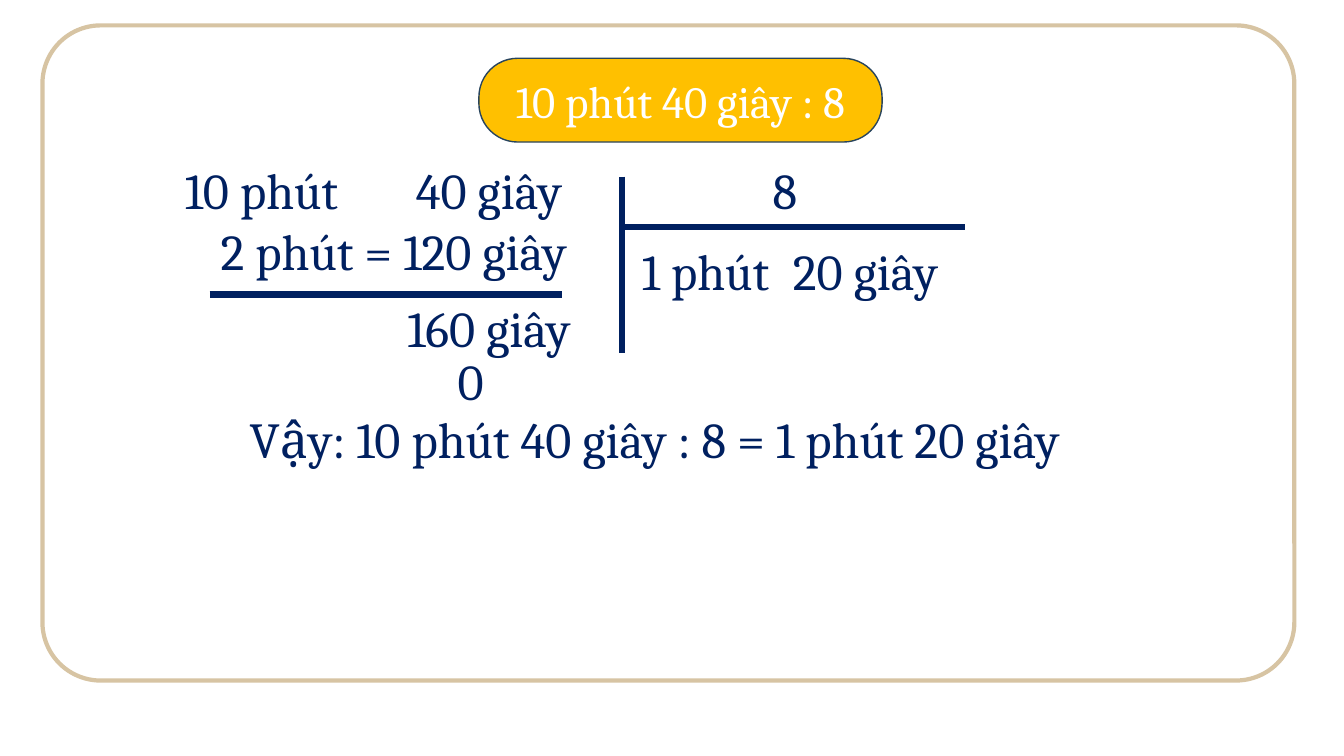
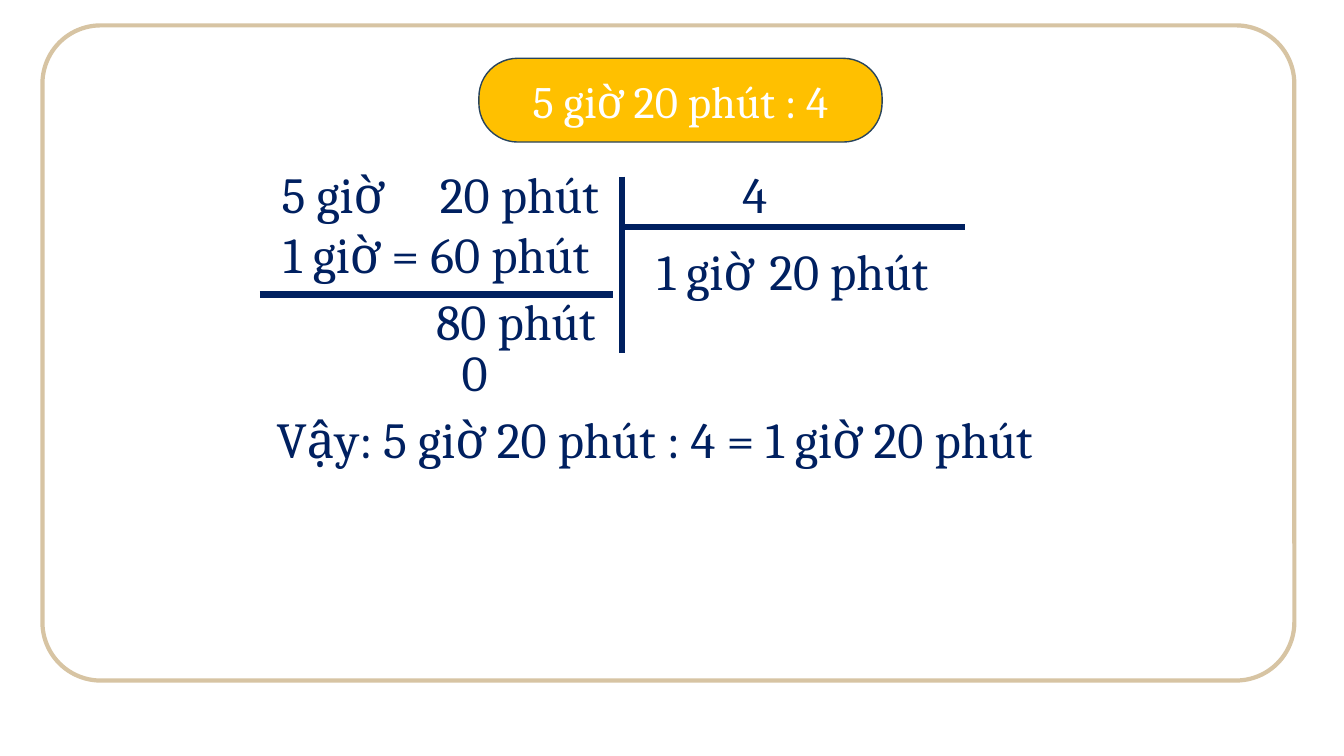
from lxml import etree
from pptx import Presentation
from pptx.dml.color import RGBColor
from pptx.enum.shapes import MSO_CONNECTOR, MSO_SHAPE
from pptx.enum.text import MSO_ANCHOR, MSO_AUTO_SIZE, PP_ALIGN
from pptx.oxml.ns import qn
from pptx.util import Cm, Pt

ROUNDED = MSO_SHAPE.ROUNDED_RECTANGLE
STRAIGHT = MSO_CONNECTOR.STRAIGHT
CENTER = PP_ALIGN.CENTER
MIDDLE = MSO_ANCHOR.MIDDLE
NO_AUTOFIT = MSO_AUTO_SIZE.NONE

WHITE = RGBColor(0xFF, 0xFF, 0xFF)
NAVY = RGBColor(0x00, 0x20, 0x60)
GOLD = RGBColor(0xFF, 0xC0, 0x00)
SAND = RGBColor(0xD7, 0xC4, 0xA3)
SLATE = RGBColor(0x28, 0x44, 0x5D)
FONT = "Cambria"

# Left, top, width, height in cm
FRAME = (1.07, 0.64, 31.55, 16.51)
PILL = (12.07, 1.47, 10.16, 2.11)
# Left, top, width, height, corner, fill, outline, outline width
PANELS = [
    (*FRAME, 0.089, WHITE, SAND, 3),
    (*PILL, 0.463, GOLD, SLATE, 1),
]

# Division bracket and subtraction rule, in cm
BRACKET_X, BRACKET_TOP, BRACKET_BOTTOM = 15.67, 4.45, 8.89
DIVISOR_Y, DIVISOR_RIGHT = 5.72, 24.33
RULE_Y, RULE_LENGTH = 7.42, 8.89

# Text box sizes in cm
SHORT, LONG, FULL = 5.2, 10.5, 26.24
BOX_HEIGHT = 1.8

# Title, left end of the subtraction rule, then texts: wording, centre x, top, width
EXERCISES = [
    ("10 phút 40 giây : 8", 5.28, [
        ("10 phút", 6.59, 3.89, SHORT),
        ("40 giây", 12.32, 3.89, SHORT),
        ("8", 19.78, 3.89, SHORT),
        ("1 phút", 17.78, 5.93, SHORT),
        ("20 giây", 21.81, 5.93, SHORT),
        ("2 phút = 120 giây", 9.92, 5.41, LONG),
        ("160 giây", 12.32, 7.37, SHORT),
        ("0", 11.86, 8.69, SHORT),
        ("Vậy: 10 phút 40 giây : 8 = 1 phút 20 giây", 16.5, 10.16, FULL),
    ]),
    ("5 giờ 20 phút : 4", 6.55, [
        ("5 giờ", 8.39, 3.99, SHORT),
        ("20 phút", 13.09, 3.99, SHORT),
        ("4", 19.02, 3.99, SHORT),
        ("1 giờ", 17.78, 5.93, SHORT),
        ("20 phút", 21.39, 5.93, SHORT),
        ("1 giờ = 60 phút", 11, 5.51, LONG),
        ("80 phút", 13, 7.19, SHORT),
        ("0", 11.96, 8.46, SHORT),
        ("Vậy: 5 giờ 20 phút : 4 = 1 giờ 20 phút", 16.5, 10.16, FULL),
    ]),
]


def write_centred(tf, text, size, color):
    tf.text = text
    tf.word_wrap = True
    p = tf.paragraphs[0]
    p.alignment = CENTER
    p.line_spacing = 1.0
    r = p.runs[0]
    r.font.name = FONT
    r.font.size = Pt(size)
    r.font.color.rgb = color


prs = Presentation()
prs.slide_width, prs.slide_height = Cm(33.87), Cm(19.05)
layout = prs.slide_layouts.get_by_name("Title Only")

for heading, rule_left, texts in EXERCISES:
    s = prs.slides.add_slide(layout)

    for left, top, width, height, corner, fill, outline, weight in PANELS:
        sp = s.shapes.add_shape(ROUNDED, Cm(left), Cm(top), Cm(width), Cm(height))
        sp.adjustments[0] = corner
        sp.shadow.inherit = False
        sp.fill.solid()
        sp.fill.fore_color.rgb = fill
        sp.line.color.rgb = outline
        sp.line.width = Pt(weight)

    # The title goes in front of the pill
    title = s.shapes.title
    title.element.getparent().append(title.element)
    title.left, title.top, title.width, title.height = map(Cm, PILL)
    tf = title.text_frame
    write_centred(tf, heading, 32, WHITE)
    tf.auto_size = NO_AUTOFIT
    tf.vertical_anchor = MIDDLE

    lines = [
        (BRACKET_X, BRACKET_TOP, BRACKET_X, BRACKET_BOTTOM),
        (BRACKET_X, DIVISOR_Y, DIVISOR_RIGHT, DIVISOR_Y),
        (rule_left, RULE_Y, rule_left + RULE_LENGTH, RULE_Y),
    ]
    for ends in lines:
        line = s.shapes.add_connector(STRAIGHT, *map(Cm, ends))
        line.line.color.rgb = NAVY
        line.line.width = Pt(4.5)
        etree.SubElement(line.element.spPr, qn("a:effectLst"))

    for text, center, top, width in texts:
        box = s.shapes.add_textbox(Cm(center - width / 2), Cm(top), Cm(width), Cm(BOX_HEIGHT))
        write_centred(box.text_frame, text, 36, NAVY)

prs.save("out.pptx")
